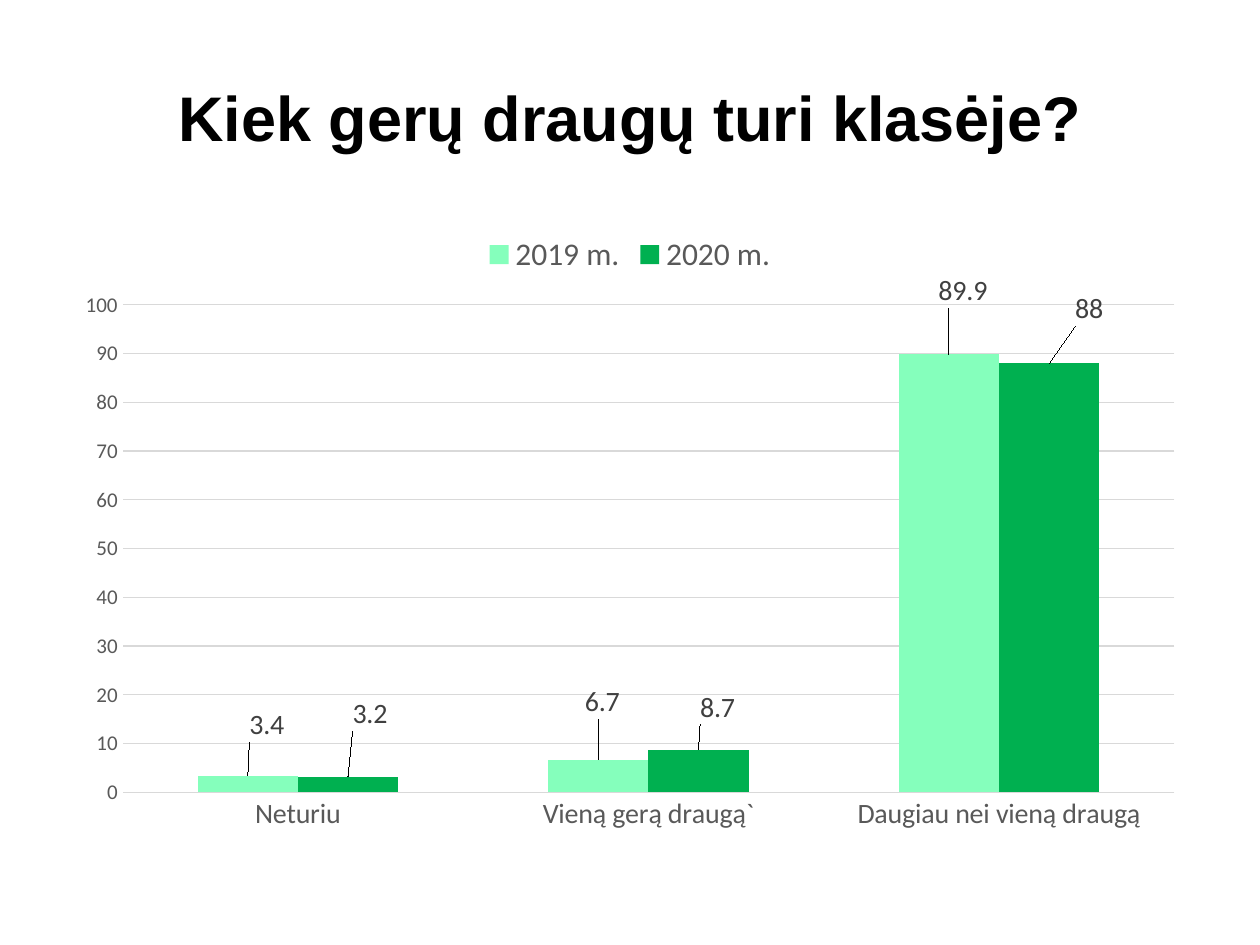
from lxml import etree
from pptx import Presentation
from pptx.chart.data import CategoryChartData
from pptx.dml.color import RGBColor
from pptx.enum.chart import XL_CHART_TYPE, XL_LABEL_POSITION, XL_LEGEND_POSITION, XL_TICK_MARK
from pptx.enum.text import MSO_ANCHOR, PP_ALIGN
from pptx.oxml.ns import qn
from pptx.util import Pt

PX = 914400 / 126
SLIDE_SIZE = (1260, 945)
TITLE_BOX = (63, 38, 1134, 157)
CHART_BOX = (63, 220, 1134, 624)

CLUSTERED = XL_CHART_TYPE.COLUMN_CLUSTERED
OUTSIDE_END = XL_LABEL_POSITION.OUTSIDE_END
LEGEND_TOP = XL_LEGEND_POSITION.TOP
NO_TICK = XL_TICK_MARK.NONE
MIDDLE = MSO_ANCHOR.MIDDLE
CENTER = PP_ALIGN.CENTER

BLACK = RGBColor(0x00, 0x00, 0x00)
AXIS_GREY = RGBColor(0x59, 0x59, 0x59)
LABEL_GREY = RGBColor(0x40, 0x40, 0x40)
GRID_GREY = RGBColor(0xD9, 0xD9, 0xD9)
LIGHT_GREEN = RGBColor(0x85, 0xFF, 0xBC)
GREEN = RGBColor(0x00, 0xB0, 0x50)

ANSWERS = ("Neturiu", "Vieną gerą draugą`", "Daugiau nei vieną draugą")
YEARS = (
    ("2019 m.", (3.4, 6.7, 89.9), LIGHT_GREEN, ((19, -28), (4, -35), (14, -41))),
    ("2020 m.", (3.2, 8.7, 88), GREEN, ((22, -40), (19, -20), (40, -32))),
)


def emu(lengths):
    return [round(length * PX) for length in lengths]


def set_values(target, values):
    for name, value in values.items():
        setattr(target, name, value)


def style_font(font, size, color, name="Calibri", bold=False):
    set_values(font, {"size": Pt(size), "name": name, "bold": bold})
    font.color.rgb = color


def add_title(slide, wording):
    frame = slide.shapes.add_textbox(*emu(TITLE_BOX)).text_frame
    set_values(frame, {"word_wrap": True, "vertical_anchor": MIDDLE})
    heading = frame.paragraphs[0]
    heading.alignment = CENTER
    run = heading.add_run()
    run.text = wording
    style_font(run.font, 36, BLACK, "Arial", True)


def style_axes(chart):
    answers, percent = chart.category_axis, chart.value_axis
    for axis, size in ((answers, 16), (percent, 12)):
        set_values(axis, {"major_tick_mark": NO_TICK, "minor_tick_mark": NO_TICK})
        axis.format.line.fill.background()
        style_font(axis.tick_labels.font, size, AXIS_GREY)
    set_values(percent, {"minimum_scale": 0, "maximum_scale": 100, "major_unit": 10})
    grid = percent.major_gridlines.format.line
    grid.color.rgb = GRID_GREY
    grid.width = Pt(0.75)


def style_legend(chart):
    chart.has_legend = True
    set_values(chart.legend, {"position": LEGEND_TOP, "include_in_layout": False})
    style_font(chart.legend.font, 18, AXIS_GREY)


def style_series(series, color, point_count):
    series.format.fill.solid()
    series.format.fill.fore_color.rgb = color
    labels = series.data_labels
    set_values(labels, {"show_value": True, "position": OUTSIDE_END})
    style_font(labels.font, 16, LABEL_GREY)
    for index in range(point_count):
        label = series.points[index].data_label
        style_font(label.font, 16, LABEL_GREY)
        label.position = OUTSIDE_END


def shift_label(label, offset):
    for old_layout in label.findall(qn("c:layout")):
        label.remove(old_layout)
    layout = etree.Element(qn("c:layout"))
    manual = etree.SubElement(layout, qn("c:manualLayout"))
    for axis, distance, extent in zip("xy", offset, CHART_BOX[2:]):
        share = etree.SubElement(manual, qn(f"c:{axis}"))
        share.set("val", str(distance / extent))
    label.find(qn("c:idx")).addnext(layout)


def add_friends_chart(slide):
    data = CategoryChartData()
    data.categories = ANSWERS
    for year, values, _, _ in YEARS:
        data.add_series(year, values)
    chart = slide.shapes.add_chart(CLUSTERED, *emu(CHART_BOX), data).chart
    chart.has_title = False
    style_font(chart.font, 10, BLACK)
    style_axes(chart)
    style_legend(chart)
    plot = chart.plots[0]
    set_values(plot, {"gap_width": 150, "overlap": 0, "vary_by_categories": False})
    for series, (_, values, color, _) in zip(plot.series, YEARS):
        style_series(series, color, len(values))
    offsets = [offset for year in YEARS for offset in year[3]]
    for label, offset in zip(chart.element.iter(qn("c:dLbl")), offsets):
        shift_label(label, offset)


def main():
    deck = Presentation()
    deck.slide_width, deck.slide_height = emu(SLIDE_SIZE)
    slide = deck.slides.add_slide(deck.slide_layouts[6])
    add_title(slide, "Kiek gerų draugų turi klasėje?")
    add_friends_chart(slide)
    deck.save("out.pptx")


if __name__ == "__main__":
    main()
